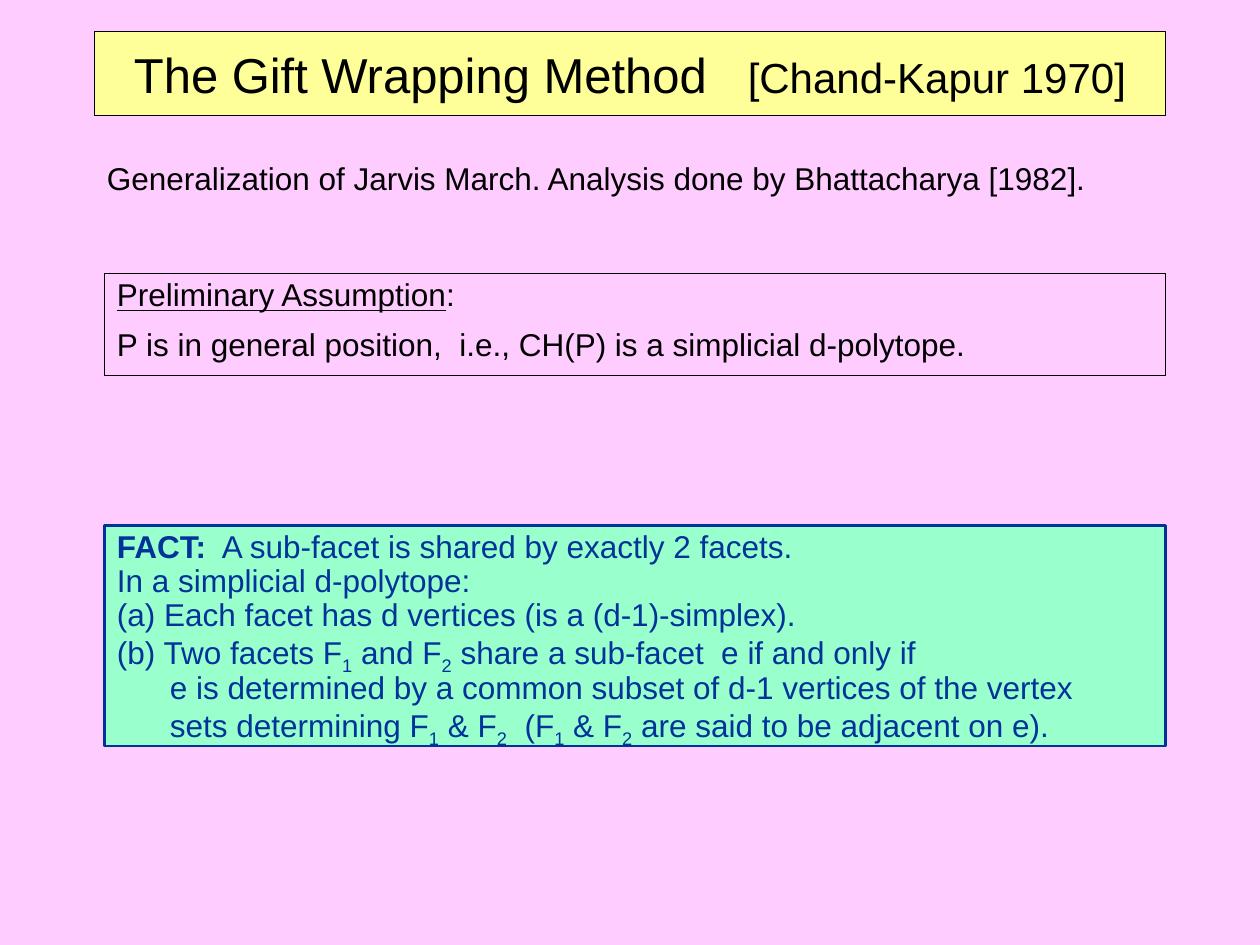
from pptx import Presentation
from pptx.dml.color import RGBColor
from pptx.enum.shapes import MSO_SHAPE
from pptx.enum.text import MSO_ANCHOR, PP_ALIGN
from pptx.util import Inches, Pt

COLORS = {
    "background": "FFCCFF",
    "title": "FFFF99",
    "fact": "99FFCC",
    "blue": "003399",
    "black": "000000",
}


def color(name):
    return RGBColor.from_string(COLORS[name])


def add_box(slide, left, top, width, height, fill=None, line=None, weight=1):
    """Add a rectangle with left-aligned, top-anchored text."""
    shape = slide.shapes.add_shape(MSO_SHAPE.RECTANGLE, Inches(left), Inches(top),
                                   Inches(width), Inches(height))
    shape.shadow.inherit = False
    if fill:
        shape.fill.solid()
        shape.fill.fore_color.rgb = color(fill)
    else:
        shape.fill.background()
    if line:
        shape.line.color.rgb = color(line)
        shape.line.width = Pt(weight)
    else:
        shape.line.fill.background()
    frame = shape.text_frame
    frame.word_wrap = True
    frame.vertical_anchor = MSO_ANCHOR.TOP
    return frame


def add_paragraph(frame, ink="black", size=18, before=0, spacing=0.9):
    """Style the frame's first paragraph while it is empty, else add one."""
    first = frame.paragraphs[0]
    paragraph = frame.add_paragraph() if first.runs else first
    paragraph.alignment = PP_ALIGN.LEFT
    paragraph.line_spacing = spacing
    paragraph.space_before = Pt(before)
    paragraph.font.name = "Arial"
    paragraph.font.size = Pt(size)
    paragraph.font.color.rgb = color(ink)
    return paragraph


def add_run(paragraph, text):
    run = paragraph.add_run()
    run.text = text
    return run


def add_indexed_text(paragraph, text):
    """Write text in which the character after each underscore is a subscript."""
    plain, *indexed = text.split("_")
    add_run(paragraph, plain)
    for part in indexed:
        subscript = add_run(paragraph, part[0])
        subscript.font._element.set("baseline", "-25000")
        add_run(paragraph, part[1:])


def add_title(slide):
    frame = add_box(slide, 0.75, 0.25, 8.5, 0.67, "title", "black", 0.75)
    frame.vertical_anchor = MSO_ANCHOR.MIDDLE
    paragraph = add_paragraph(frame, size=28, spacing=1)
    paragraph.alignment = PP_ALIGN.CENTER
    add_run(paragraph, "The Gift Wrapping Method")
    # One widened space separates the title from its citation
    gap = add_run(paragraph, " ")
    gap.font._element.set("spc", "1560")
    add_run(paragraph, "[Chand-Kapur 1970]").font.size = Pt(24)


def add_assumption(slide):
    frame = add_box(slide, 0.83, 2.17, 8.42, 0.81, line="black")
    heading = add_paragraph(frame, before=9)
    add_run(heading, "Preliminary Assumption").font.underline = True
    add_run(heading, ":")
    statement = add_paragraph(frame, before=9)
    add_run(statement, "P is in general position,  i.e., CH(P) is a simplicial d-polytope.")


def add_fact(slide):
    frame = add_box(slide, 0.83, 4.17, 8.42, 1.75, "fact", "blue", 1.5)
    heading = add_paragraph(frame, "blue", before=9)
    add_run(heading, "FACT:").font.bold = True
    add_run(heading, "  A sub-facet is shared by exactly 2 facets.")
    for text in ("In a simplicial d-polytope:",
                 "(a) Each facet has d vertices (is a (d-1)-simplex)."):
        add_run(add_paragraph(frame, "blue"), text)

    # Item (b) has a hanging indent for its continuation lines
    item = add_paragraph(frame, "blue")
    properties = item._p.get_or_add_pPr()
    properties.set("marL", str(Inches(0.42)))
    properties.set("indent", str(-Inches(0.42)))
    lines = (
        "(b) Two facets F_1 and F_2 share a sub-facet  e if and only if",
        "e is determined by a common subset of d-1 vertices of the vertex",
        "sets determining F_1 & F_2  (F_1 & F_2 are said to be adjacent on e).",
    )
    for number, text in enumerate(lines):
        if number:
            item.add_line_break()
        add_indexed_text(item, text)


def main():
    presentation = Presentation()
    presentation.slide_width = Inches(10)
    presentation.slide_height = Inches(7.5)
    slide = presentation.slides.add_slide(presentation.slide_layouts[6])
    slide.background.fill.solid()
    slide.background.fill.fore_color.rgb = color("background")

    add_title(slide)

    # Introductory line
    introduction = add_paragraph(add_box(slide, 0.75, 1.25, 8.5, 0.37), before=9)
    add_run(introduction,
            "Generalization of Jarvis March. Analysis done by Bhattacharya [1982].")

    add_fact(slide)
    add_assumption(slide)
    presentation.save("out.pptx")


if __name__ == "__main__":
    main()
